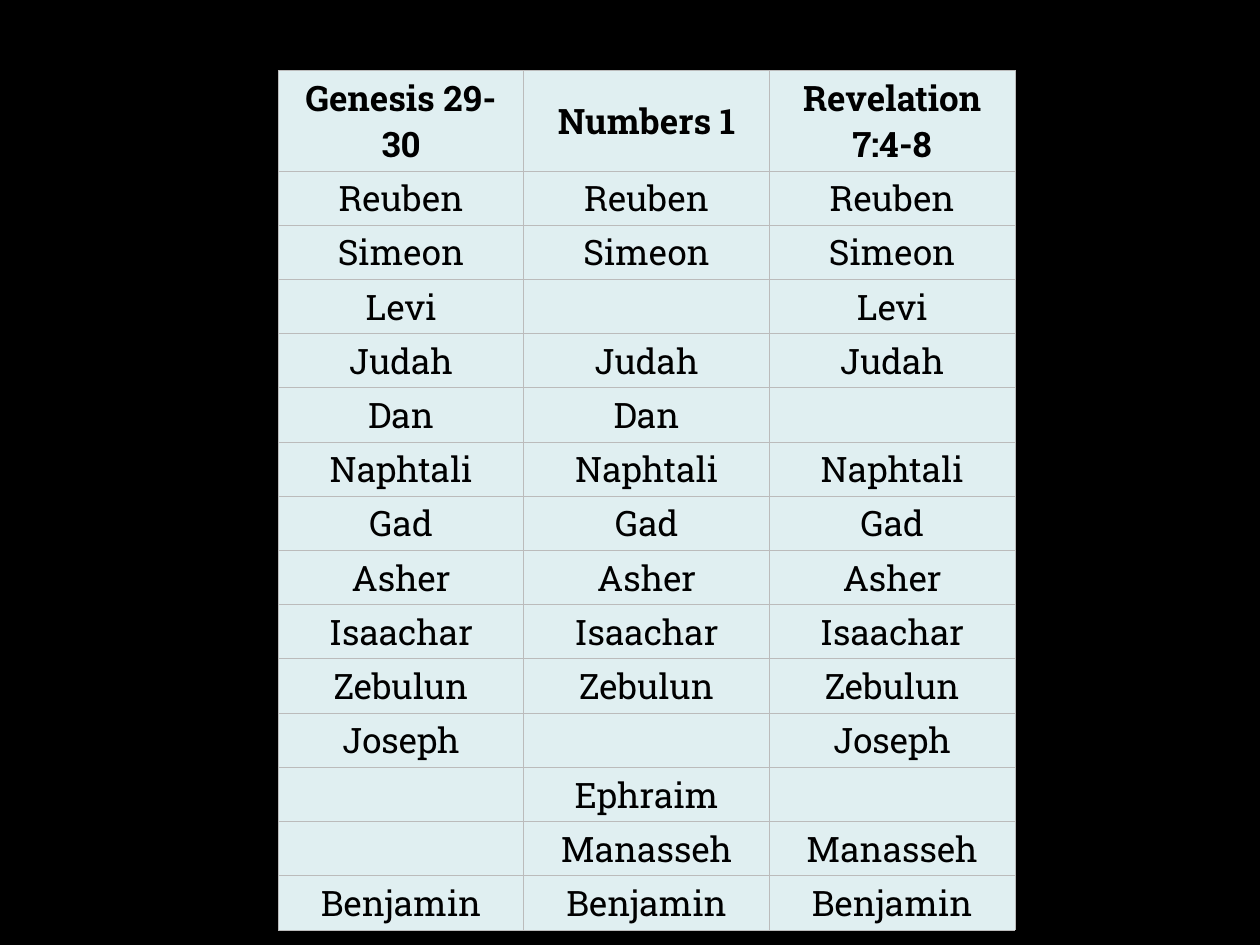
from lxml import etree
from pptx import Presentation
from pptx import util as u
from pptx.dml.color import RGBColor
from pptx.enum import text
from pptx.oxml import ns

COLORS = {"background": "000000", "cell": "E0EFF1", "border": "BBBBBB", "text": "000000"}
CELL_FORMAT = {
    "margin_left": u.Cm(0.18),
    "margin_right": u.Cm(0.18),
    "margin_top": u.Cm(0.08),
    "margin_bottom": u.Cm(0.08),
    "vertical_anchor": text.MSO_ANCHOR.MIDDLE,
}
FONT_FORMAT = {"name": "Roboto Slab", "size": u.Pt(20)}
COLUMN_WIDTH = u.Cm(4.95)
ROW_HEIGHT = u.Cm(0.69)

HEADINGS = ("Genesis 29-30", "Numbers 1", "Revelation 7:4-8")
# Each tribe with the columns that list it
TRIBES = {
    "Reuben": (0, 1, 2),
    "Simeon": (0, 1, 2),
    "Levi": (0, 2),
    "Judah": (0, 1, 2),
    "Dan": (0, 1),
    "Naphtali": (0, 1, 2),
    "Gad": (0, 1, 2),
    "Asher": (0, 1, 2),
    "Isaachar": (0, 1, 2),
    "Zebulun": (0, 1, 2),
    "Joseph": (0, 2),
    "Ephraim": (1,),
    "Manasseh": (1, 2),
    "Benjamin": (0, 1, 2),
}


def apply_format(target, values):
    for name, value in values.items():
        setattr(target, name, value)


def fill_solid(fill, color):
    fill.solid()
    fill.fore_color.rgb = RGBColor.from_string(COLORS[color])


def add_borders(cell):
    """Draw a thin line on all four sides; call before setting the cell's fill."""
    properties = cell._tc.get_or_add_tcPr()
    for side in ("lnL", "lnR", "lnT", "lnB"):
        line = etree.SubElement(properties, ns.qn(f"a:{side}"), w=str(u.Pt(0.5)))
        solid = etree.SubElement(line, ns.qn("a:solidFill"))
        etree.SubElement(solid, ns.qn("a:srgbClr"), val=COLORS["border"])


def format_cell(cell, words, bold):
    apply_format(cell, CELL_FORMAT)
    add_borders(cell)
    fill_solid(cell.fill, "cell")
    paragraph = cell.text_frame.paragraphs[0]
    paragraph.alignment = text.PP_ALIGN.CENTER
    if words:
        run = paragraph.add_run()
        run.text = words
        apply_format(run.font, {**FONT_FORMAT, "bold": bold})
        run.font.color.rgb = RGBColor.from_string(COLORS["text"])


def add_tribes_table(slide):
    rows = [HEADINGS]
    for tribe, listed in TRIBES.items():
        rows.append([tribe if column in listed else "" for column in range(len(HEADINGS))])
    shape = slide.shapes.add_table(
        len(rows), len(HEADINGS), u.Cm(5.61), u.Cm(1.42),
        COLUMN_WIDTH * len(HEADINGS), ROW_HEIGHT * len(rows))
    table = shape.table
    apply_format(table, {"first_row": False, "horz_banding": False})
    for column in table.columns:
        column.width = COLUMN_WIDTH
    for row_index, (row, row_words) in enumerate(zip(table.rows, rows)):
        row.height = ROW_HEIGHT
        for cell, words in zip(row.cells, row_words):
            format_cell(cell, words, bold=row_index == 0)
    shape.height = u.Cm(16.2)


def main():
    presentation = Presentation()
    apply_format(presentation, {"slide_width": u.Cm(25.4), "slide_height": u.Cm(19.05)})
    slide = presentation.slides.add_slide(presentation.slide_layouts[6])
    fill_solid(slide.background.fill, "background")
    add_tribes_table(slide)
    presentation.save("out.pptx")


if __name__ == "__main__":
    main()
